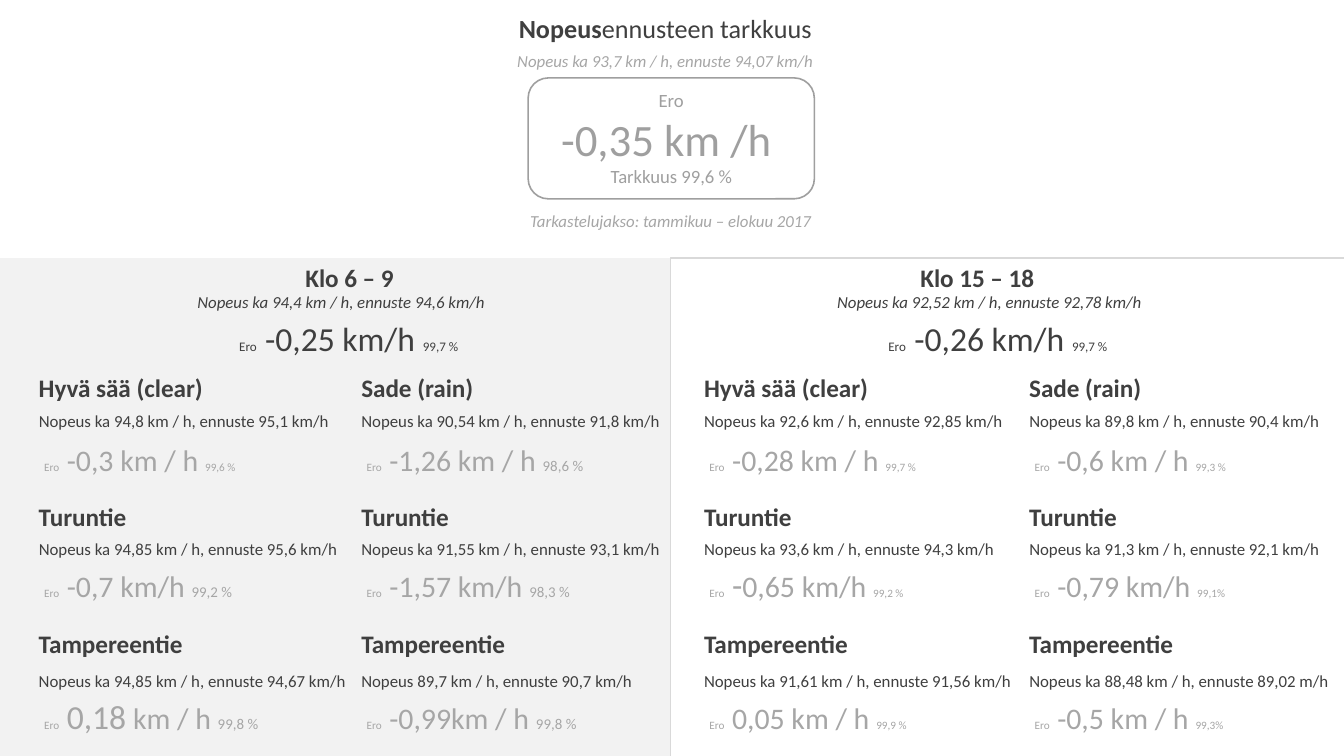
from dataclasses import dataclass

from pptx import Presentation
from pptx.dml.color import RGBColor
from pptx.enum.shapes import MSO_SHAPE
from pptx.enum.text import MSO_ANCHOR, MSO_AUTO_SIZE, PP_ALIGN
from pptx.util import Inches, Pt

FONT = "Calibri"
DARK = RGBColor(0x3F, 0x3F, 0x3F)
GREY = RGBColor(0x9F, 0x9F, 0x9F)
LIGHT = RGBColor(0xA6, 0xA6, 0xA6)
PANEL = RGBColor(0xF2, 0xF2, 0xF2)
BORDER = RGBColor(0xD9, 0xD9, 0xD9)
WHITE = RGBColor(0xFF, 0xFF, 0xFF)


@dataclass
class Span:
    text: str
    size: float


@dataclass
class Result:
    speeds: str
    speeds_width: float
    difference: str
    accuracy: str
    accuracy_size: float = 6
    lead: str = " "


@dataclass
class Row:
    heading: str
    heading_top: float
    heading_width: float
    speeds_top: float
    difference_top: float
    difference_width: float


@dataclass
class Column:
    left: float
    weather: str
    weather_width: float
    weather_box_width: float
    results: list[Result]


@dataclass
class Period:
    heading: str
    heading_box: tuple
    heading_align: PP_ALIGN
    speeds: str
    speeds_box: tuple
    difference: str
    difference_left: float


ROWS = [
    Row("", 2.72, 0, 3.01, 2.99, 0),
    Row("Turuntie", 3.68, 1.54, 3.96, 3.93, 2.59),
    Row("Tampereentie", 4.63, 1.97, 4.94, 4.91, 2.67),
]

COLUMNS = [
    Column(0.19, "Hyvä sää (clear)", 2.47, 2.65, [
        Result("Nopeus ka 94,8 km / h, ennuste 95,1 km/h", 2.38, "-0,3 km / h ", "99,6 %"),
        Result("Nopeus ka 94,85 km / h, ennuste 95,6 km/h", 2.42, "-0,7 km/h ", "99,2 %", 8),
        Result("Nopeus ka 94,85 km / h, ennuste 94,67 km/h", 2.5, " km / h ", "99,8 %", 8, " 0,18"),
    ]),
    Column(2.59, "Sade (rain)", 1.92, 2.5, [
        Result("Nopeus ka 90,54 km / h, ennuste 91,8 km/h", 2.62, "-1,26 km / h ", "98,6 %", 8),
        Result("Nopeus ka 91,55 km / h, ennuste 93,1 km/h", 2.42, "-1,57 km/h ", "98,3 %", 8),
        Result("Nopeus 89,7 km / h, ennuste 90,7 km/h", 2.23, "-0,99km / h ", "99,8 %", 8),
    ]),
    Column(5.14, "Hyvä sää (clear)", 2.47, 2.65, [
        Result("Nopeus ka 92,6 km / h, ennuste 92,85 km/h", 2.44, "-0,28 km / h ", "99,7 %"),
        Result("Nopeus ka 93,6 km / h, ennuste 94,3 km/h", 2.38, "0,65 km/h ", "99,2 %", lead=" -"),
        Result("Nopeus ka 91,61 km / h, ennuste 91,56 km/h", 2.5, "0,05 km / h ", "99,9 %"),
    ]),
    Column(7.56, "Sade (rain)", 1.73, 2.5, [
        Result("Nopeus ka 89,8 km / h, ennuste 90,4 km/h", 2.38, "-0,6 km / h ", "99,3 %"),
        Result("Nopeus ka 91,3 km / h, ennuste 92,1 km/h", 2.38, "-0,79 km/h ", "99,1%"),
        Result("Nopeus ka 88,48 km / h, ennuste 89,02 m/h", 2.45, "-0,5 km / h ", "99,3%"),
    ]),
]

PERIODS = [
    Period("Klo 6 – 9", (1.79, 1.9, 1.62, 0.33), PP_ALIGN.CENTER,
           "Nopeus ka 94,4 km / h, ennuste 94,6 km/h", (1.37, 2.12, 2.35, 0.25),
           "-0,25 km/h ", 1.51),
    Period("Klo 15 – 18", (6.75, 1.9, 1.76, 0.33), PP_ALIGN.LEFT,
           "Nopeus ka 92,52 km / h, ennuste 92,78 km/h", (6.13, 2.12, 2.48, 0.25),
           "-0,26 km/h ", 6.34),
]


def write(para, text: str, *, size: float, color: RGBColor = DARK,
          bold: bool = False, italic: bool = False) -> None:
    span = para.add_run()
    span.text = text
    span.font.name = FONT
    span.font.size = Pt(size)
    span.font.color.rgb = color
    span.font.bold = bold
    span.font.italic = italic


def add_label(page, text: str, box: tuple, *, align: PP_ALIGN = PP_ALIGN.LEFT,
              wrap: bool = True, grow: bool = True, **style) -> None:
    frame = page.shapes.add_textbox(*map(Inches, box)).text_frame
    frame.word_wrap = wrap
    frame.auto_size = MSO_AUTO_SIZE.SHAPE_TO_FIT_TEXT if grow else MSO_AUTO_SIZE.NONE
    frame.paragraphs[0].alignment = align
    write(frame.paragraphs[0], text, **style)


def add_box(page, kind: MSO_SHAPE, box: tuple, *, fill: RGBColor | None = None,
            line: RGBColor | None = None, lines: list[list[Span]] | None = None,
            color: RGBColor = DARK, align: PP_ALIGN = PP_ALIGN.LEFT) -> None:
    shape = page.shapes.add_shape(kind, *map(Inches, box))
    shape.shadow.inherit = False
    if fill is None:
        shape.fill.background()
    else:
        shape.fill.solid()
        shape.fill.fore_color.rgb = fill
    if line is None:
        shape.line.fill.background()
    else:
        shape.line.color.rgb = line
        shape.line.width = Pt(0.85)
    frame = shape.text_frame
    frame.vertical_anchor = MSO_ANCHOR.MIDDLE
    for index, spans in enumerate(lines or []):
        para = frame.add_paragraph() if index else frame.paragraphs[0]
        para.alignment = align
        for span in spans:
            write(para, span.text, size=span.size, color=color)


def add_title(page) -> None:
    title = page.shapes.title
    title.left, title.top, title.width, title.height = map(Inches, (3.76, 0.04, 2.77, 0.34))
    frame = title.text_frame
    frame.word_wrap = True
    frame.vertical_anchor = MSO_ANCHOR.TOP
    frame.auto_size = MSO_AUTO_SIZE.SHAPE_TO_FIT_TEXT
    frame.paragraphs[0].alignment = PP_ALIGN.LEFT
    write(frame.paragraphs[0], "Nopeus", size=14, bold=True)
    write(frame.paragraphs[0], "ennusteen tarkkuus", size=14)


def add_summary(page) -> None:
    add_box(page, MSO_SHAPE.ROUNDED_RECTANGLE, (3.93, 0.58, 2.13, 0.9), fill=WHITE, line=GREY,
            color=GREY, align=PP_ALIGN.CENTER,
            lines=[[Span(" ", 9), Span("Ero ", 10)], [Span("-0,35 km /h ", 24)],
                   [Span("Tarkkuus 99,6 %", 10)]])
    add_label(page, "Nopeus ka 93,7 km / h, ennuste 94,07 km/h", (3.75, 0.33, 2.42, 0.25),
              wrap=False, size=9, color=LIGHT, italic=True)
    add_label(page, "Tarkastelujakso: tammikuu – elokuu 2017", (3.76, 1.52, 2.46, 0.32),
              align=PP_ALIGN.CENTER, grow=False, size=9, color=LIGHT, italic=True)


def add_period(page, period: Period) -> None:
    add_box(page, MSO_SHAPE.ROUNDED_RECTANGLE, (period.difference_left, 2.09, 2.17, 0.83),
            align=PP_ALIGN.CENTER,
            lines=[[Span("Ero", 7), Span(" ", 20), Span(period.difference, 18), Span("99,7 %", 7)]])
    add_label(page, period.heading, period.heading_box, align=period.heading_align,
              size=13.5, bold=True)
    add_label(page, period.speeds, period.speeds_box, wrap=False, size=9, italic=True)


def add_result(page, column: Column, row: Row, result: Result) -> None:
    add_box(page, MSO_SHAPE.ROUNDED_RECTANGLE,
            (column.left, row.difference_top, row.difference_width or column.weather_box_width, 0.83),
            color=LIGHT,
            lines=[[Span("Ero", 6), Span(result.lead, 18), Span(result.difference, 16),
                    Span(result.accuracy, result.accuracy_size)]])
    add_label(page, row.heading or column.weather,
              (column.left, row.heading_top, row.heading_width or column.weather_width, 0.33),
              size=13.5, bold=True)
    add_label(page, result.speeds, (column.left, row.speeds_top, result.speeds_width, 0.25),
              wrap=False, size=9)


def main() -> None:
    deck = Presentation()
    deck.slide_width = Inches(10)
    deck.slide_height = Inches(10 * 9 / 16)
    page = deck.slides.add_slide(deck.slide_layouts[5])
    add_box(page, MSO_SHAPE.RECTANGLE, (0, 1.92, 4.99, 3.71), fill=PANEL)
    add_box(page, MSO_SHAPE.RECTANGLE, (4.99, 1.92, 5.06, 3.71), line=BORDER)
    add_title(page)
    add_summary(page)
    for period in PERIODS:
        add_period(page, period)
    for column in COLUMNS:
        for row, result in zip(ROWS, column.results):
            add_result(page, column, row, result)
    deck.save("out.pptx")


if __name__ == "__main__":
    main()
